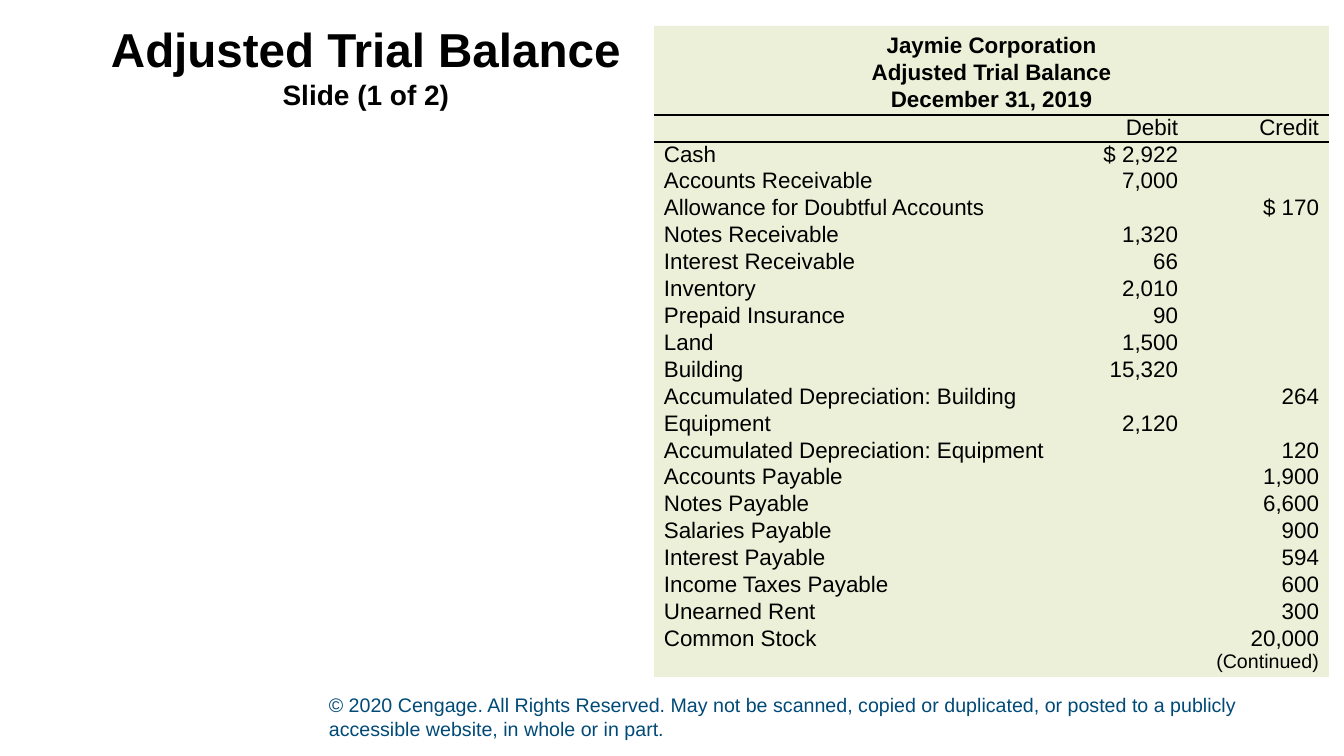
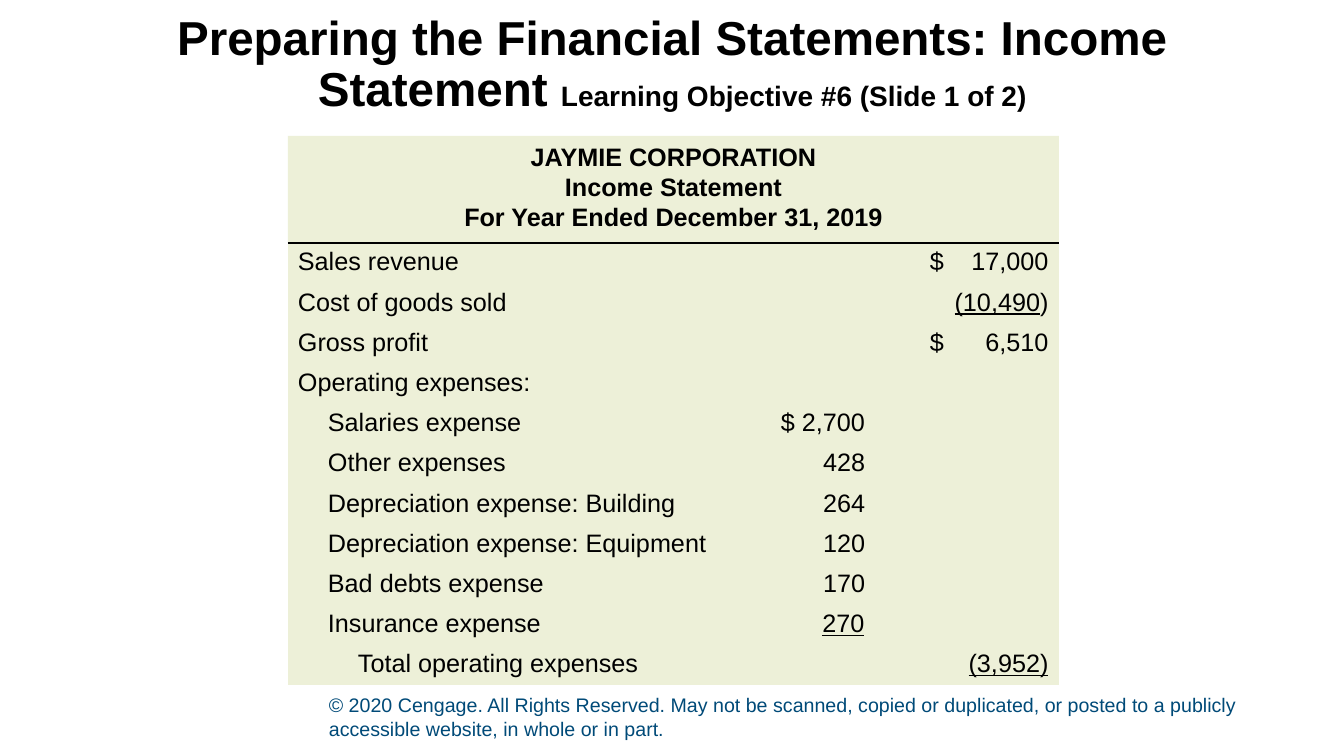
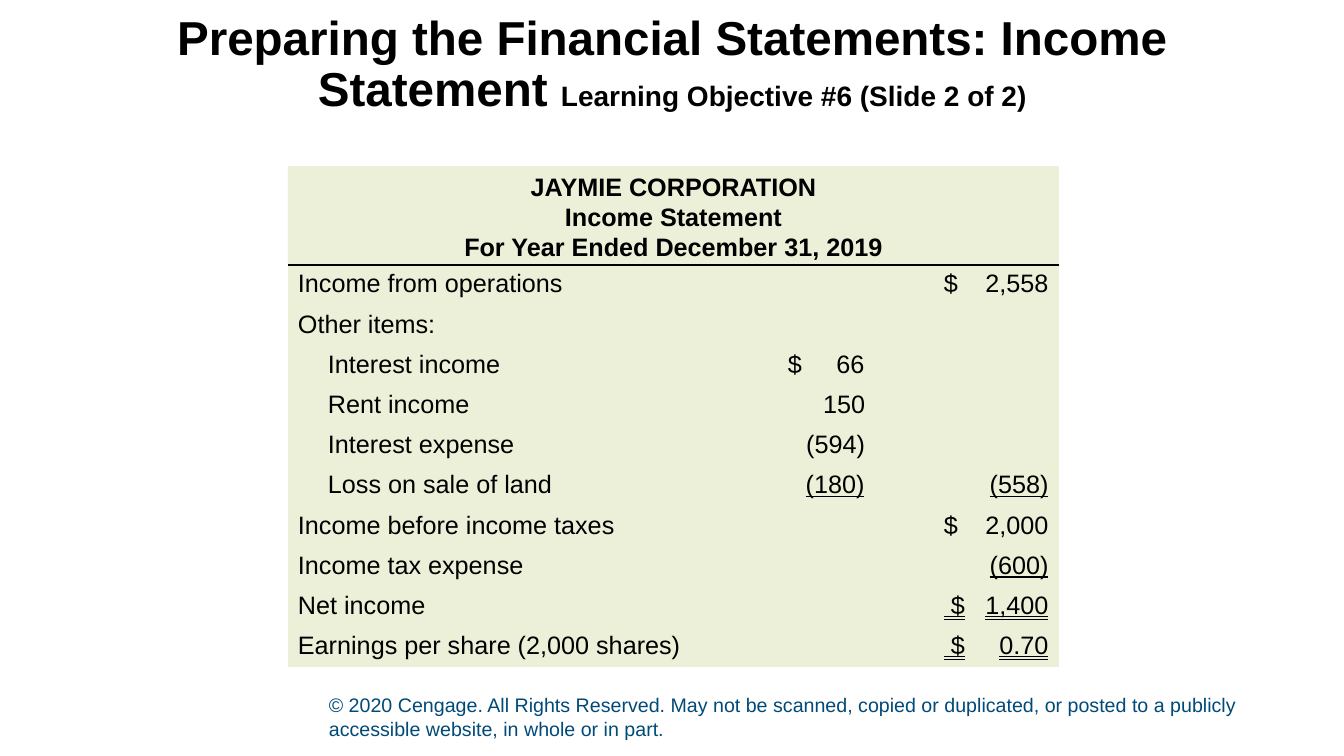
"""Build three slides with an adjusted trial balance and an income statement."""
import pptx
import pptx.dml.color
import pptx.enum.shapes
import pptx.enum.text
import pptx.oxml.ns
import pptx.util
from lxml import etree

PX = 914400 / 100.8
FONT = "Arial"
COLORS = {"ink": "000000", "panel": "EDF0D8", "footer": "004A78"}
ALIGN = pptx.enum.text.PP_ALIGN
ANCHOR = pptx.enum.text.MSO_ANCHOR
INSET = 10
INDENT = 30

FOOTER = ("© 2020 Cengage. All Rights Reserved. May not be scanned, copied or duplicated, "
          "or posted to a publicly accessible website, in whole or in part.")
STATEMENT_TITLE = "Preparing the Financial Statements: Income Statement "
STATEMENT_HEAD = ["JAYMIE CORPORATION", "Income Statement", "For Year Ended December 31, 2019"]
STATEMENT_COLS = (476, 111, 184)

BALANCE = [
    ("", "Debit", "Credit"),
    ("Cash", "$ 2,922", ""),
    ("Accounts Receivable", "7,000", ""),
    ("Allowance for Doubtful Accounts", "", "$ 170"),
    ("Notes Receivable", "1,320", ""),
    ("Interest Receivable", "66", ""),
    ("Inventory", "2,010", ""),
    ("Prepaid Insurance", "90", ""),
    ("Land", "1,500", ""),
    ("Building", "15,320", ""),
    ("Accumulated Depreciation: Building", "", "264"),
    ("Equipment", "2,120", ""),
    ("Accumulated Depreciation: Equipment", "", "120"),
    ("Accounts Payable", "", "1,900"),
    ("Notes Payable", "", "6,600"),
    ("Salaries Payable", "", "900"),
    ("Interest Payable", "", "594"),
    ("Income Taxes Payable", "", "600"),
    ("Unearned Rent", "", "300"),
    ("Common Stock", "", ["20,000", ("(Continued)", 14)]),
]

# Amounts with a gap: text, width in px, underline, plain tail
OPERATIONS = [
    (0, "Sales revenue", "", {"text": "$\t17,000", "width": 119}),
    (0, "Cost of goods sold", "", {"text": "\t(10,490", "width": 122, "rule": "single", "tail": ")"}),
    (0, "Gross profit", "", {"text": "$\t6,510", "width": 119}),
    (0, "Operating expenses:", "", ""),
    (1, "Salaries expense", "$ 2,700", ""),
    (1, "Other expenses", "428", ""),
    (1, "Depreciation expense: Building", "264", ""),
    (1, "Depreciation expense: Equipment", "120", ""),
    (1, "Bad debts expense", "170", ""),
    (1, "Insurance expense", {"text": "\t270", "width": 77, "rule": "single"}, ""),
    (2, "Total operating expenses", "", {"text": "\t(3,952)", "width": 108, "rule": "single"}),
]
OTHER_ITEMS = [
    (0, "Income from operations", "", {"text": "$\t2,558", "width": 105}),
    (0, "Other items:", "", ""),
    (1, "Interest income", {"text": "$\t66", "width": 77}, ""),
    (1, "Rent income", "150", ""),
    (1, "Interest expense", "(594)", ""),
    (1, "Loss on sale of land", {"text": "\t(180)", "width": 73, "rule": "single"},
     {"text": "\t(558)", "width": 108, "rule": "single"}),
    (0, "Income before income taxes", "", {"text": "$\t2,000", "width": 105}),
    (0, "Income tax expense", "", {"text": "\t(600)", "width": 108, "rule": "single"}),
    (0, "Net income", "", {"text": " $\t1,400", "width": 105, "rule": "double"}),
    (0, "Earnings per share (2,000 shares)", "", {"text": " $\t0.70", "width": 105, "rule": "double"}),
]
RULES = {"single": pptx.enum.text.MSO_UNDERLINE.SINGLE_LINE,
         "double": pptx.enum.text.MSO_UNDERLINE.DOUBLE_LINE}

SLIDES = [
    {"title": [("Adjusted Trial Balance", 34), "\n", ("Slide (1 of 2)", 20)],
     "title_box": (93, 15, 546, 101), "spacing": 1,
     "head": ["Jaymie Corporation", "Adjusted Trial Balance", "December 31, 2019"],
     "head_box": (654, 26, 675, 89), "cols": (405, 129, 141), "size": 16, "pad": 0,
     "row": 25, "last": 46, "ruled": (0, 1), "rows": [(0, *row) for row in BALANCE]},
    {"title": [(STATEMENT_TITLE, 34), ("Learning Objective #6 (Slide 1 of 2)", 20)],
     "title_box": (93, 15, 1159, 101), "spacing": 0.9, "head": STATEMENT_HEAD,
     "head_box": (288, 136, 771, 107), "cols": STATEMENT_COLS, "size": 18, "pad": 5,
     "row": 38.3, "last": 38.3, "ruled": (0,), "rows": OPERATIONS},
    {"title": [(STATEMENT_TITLE, 34), ("Learning Objective #6 (Slide 2 of 2)", 20)],
     "title_box": (93, 15, 1159, 101), "spacing": 0.9, "head": STATEMENT_HEAD,
     "head_box": (288, 166, 771, 99), "cols": STATEMENT_COLS, "size": 18, "pad": 5,
     "row": 38.3, "last": 38.3, "ruled": (0,), "rows": OTHER_ITEMS},
]


def px(n):
    return pptx.util.Emu(round(n * PX))


def rgb(name):
    return pptx.dml.color.RGBColor.from_string(COLORS[name])


def add_run(p, text, size, color="ink", bold=False, rule=None):
    r = p.add_run()
    r.text = text
    r.font.name = FONT
    r.font.size = pptx.util.Pt(size)
    r.font.bold = bold
    r.font.color.rgb = rgb(color)
    if rule:
        r.font.underline = RULES[rule]


def add_box(s, box, anchor):
    tf = s.shapes.add_textbox(*map(px, box)).text_frame
    tf.word_wrap = True
    tf.vertical_anchor = anchor
    return tf.paragraphs[0]


def add_title(s, parts, box, spacing):
    p = add_box(s, box, ANCHOR.MIDDLE)
    p.alignment = ALIGN.CENTER
    p.line_spacing = spacing
    for part in parts:
        if part == "\n":
            p.add_line_break()
        else:
            add_run(p, *part, bold=True)


def add_head(s, lines, box, size):
    sp = s.shapes.add_shape(pptx.enum.shapes.MSO_SHAPE.RECTANGLE, *map(px, box))
    sp.shadow.inherit = False
    sp.fill.solid()
    sp.fill.fore_color.rgb = rgb("panel")
    sp.line.fill.background()
    tf = sp.text_frame
    tf.word_wrap = True
    tf.vertical_anchor = ANCHOR.TOP
    for i, line in enumerate(lines):
        p = tf.add_paragraph() if i else tf.paragraphs[0]
        p.alignment = ALIGN.CENTER
        add_run(p, line, size, bold=True)


def add_borders(cell, sides):
    tc_pr = cell._tc.get_or_add_tcPr()
    for i, side in enumerate(("lnL", "lnR", "lnT", "lnB")):
        ln = etree.Element(pptx.oxml.ns.qn("a:" + side))
        if side in sides:
            ln.set("w", str(pptx.util.Pt(1)))
            fill = etree.SubElement(ln, pptx.oxml.ns.qn("a:solidFill"))
            etree.SubElement(fill, pptx.oxml.ns.qn("a:srgbClr"), val=COLORS["ink"])
        else:
            ln.set("w", "0")
            etree.SubElement(ln, pptx.oxml.ns.qn("a:noFill"))
        tc_pr.insert(i, ln)


def fill_gap_amount(cell, amount, col_width, size):
    cell.margin_left = px(col_width - INSET - amount["width"])
    p = cell.text_frame.paragraphs[0]
    tabs = etree.SubElement(p._p.get_or_add_pPr(), pptx.oxml.ns.qn("a:tabLst"))
    etree.SubElement(tabs, pptx.oxml.ns.qn("a:tab"), pos=str(px(amount["width"] - 0.5)), algn="r")
    add_run(p, amount["text"], size, rule=amount.get("rule"))
    if "tail" in amount:
        add_run(p, amount["tail"], size)


def fill_lines(cell, value, size, align):
    lines = value if isinstance(value, list) else [value]
    for i, line in enumerate(lines):
        p = cell.text_frame.add_paragraph() if i else cell.text_frame.paragraphs[0]
        p.alignment = align
        text, line_size = line if isinstance(line, tuple) else (line, size)
        if text:
            add_run(p, text, line_size)
        else:
            p.font.size = pptx.util.Pt(size)


def add_ledger(s, page):
    rows, cols, size = page["rows"], page["cols"], page["size"]
    left, top, width, height = page["head_box"]
    heights = [page["row"]] * (len(rows) - 1) + [page["last"]]
    frame = s.shapes.add_table(len(rows), len(cols), px(left), px(top + height),
                               px(width), px(sum(heights)))
    table = frame.table
    table.first_row = table.horz_banding = False
    for c, col_width in enumerate(cols):
        table.columns[c].width = px(col_width)
    for i, (level, *values) in enumerate(rows):
        table.rows[i].height = px(heights[i])
        sides = {"lnT"} if i in page["ruled"] else set()
        if i + 1 in page["ruled"]:
            sides.add("lnB")
        for c, value in enumerate(values):
            cell = table.cell(i, c)
            cell.margin_left = px(INSET + (0 if c else level * INDENT))
            cell.margin_right = px(INSET)
            cell.margin_top = cell.margin_bottom = px(page["pad"])
            cell.fill.solid()
            cell.fill.fore_color.rgb = rgb("panel")
            add_borders(cell, sides)
            if isinstance(value, dict):
                fill_gap_amount(cell, value, cols[c], size)
            else:
                fill_lines(cell, value, size, ALIGN.RIGHT if c else ALIGN.LEFT)


def main():
    prs = pptx.Presentation()
    prs.slide_width, prs.slide_height = px(1344), px(756)
    for page in SLIDES:
        s = prs.slides.add_slide(prs.slide_layouts[6])
        add_run(add_box(s, (319, 695, 971, 50), ANCHOR.BOTTOM), FOOTER, 14, "footer")
        add_head(s, page["head"], page["head_box"], page["size"])
        add_ledger(s, page)
        add_title(s, page["title"], page["title_box"], page["spacing"])
    prs.save("out.pptx")


if __name__ == "__main__":
    main()
